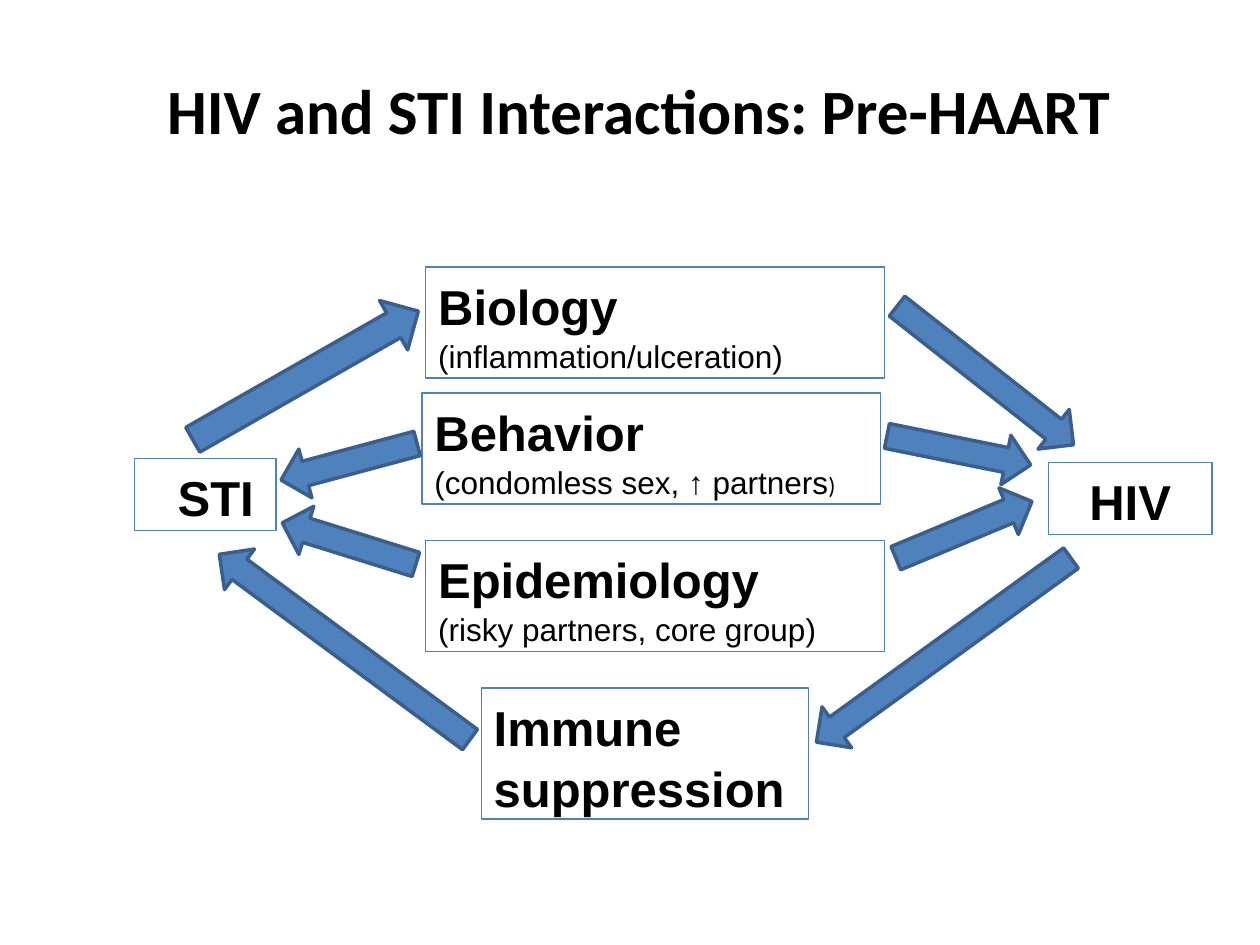
from dataclasses import dataclass
from math import atan2, degrees, hypot

from pptx import Presentation
from pptx.dml.color import RGBColor
from pptx.enum.shapes import MSO_SHAPE
from pptx.enum.text import MSO_ANCHOR, PP_ALIGN
from pptx.util import Inches, Pt

RECTANGLE, DOWN_ARROW = MSO_SHAPE.RECTANGLE, MSO_SHAPE.DOWN_ARROW
LEFT, CENTER = PP_ALIGN.LEFT, PP_ALIGN.CENTER
TOP, MIDDLE = MSO_ANCHOR.TOP, MSO_ANCHOR.MIDDLE
WIDTH, HEIGHT = 10, 7.5


@dataclass(frozen=True)
class Theme:
    """Colours, fonts and type sizes of the page."""
    ink: RGBColor = RGBColor(0, 0, 0)
    blue: RGBColor = RGBColor(0x4F, 0x81, 0xBD)
    edge: RGBColor = RGBColor(0x3A, 0x5F, 0x8C)
    title_font: str = "Calibri"
    body_font: str = "Arial"
    title: float = 36
    heading: float = 28
    detail: float = 18
    small: float = 13.5
    spacing: float = 1.05


THEME = Theme()


def add_span(para, text, size, bold=False, font=THEME.body_font):
    """Add one formatted run to a paragraph."""
    span = para.add_run()
    span.text = text
    span.font.name, span.font.size, span.font.bold = font, Pt(size), bold
    span.font.color.rgb = THEME.ink


def prepare_text(shape, align=LEFT, anchor=TOP, inset=0.1):
    """Set wrapping and alignment, and return the first paragraph."""
    frame = shape.text_frame
    frame.word_wrap = True
    frame.vertical_anchor = anchor
    frame.margin_left = Inches(inset)
    para = frame.paragraphs[0]
    para.alignment = align
    return para


def add_title(page, text):
    """Add the centred page title."""
    box = page.shapes.add_textbox(*map(Inches, (0.5, 0.24, 0.9 * WIDTH, 1.26)))
    para = prepare_text(box, CENTER, MIDDLE, inset=0.24)
    add_span(para, text, THEME.title, True, THEME.title_font)


def add_box(page, bounds, heading, align=LEFT, inset=0.1):
    """Add an outlined box with a bold heading and return its paragraph."""
    box = page.shapes.add_shape(RECTANGLE, *map(Inches, bounds))
    box.shadow.inherit = False
    box.fill.background()
    box.line.color.rgb, box.line.width = THEME.blue, Pt(0.75)
    para = prepare_text(box, align, inset=inset)
    para.line_spacing = THEME.spacing
    add_span(para, heading, THEME.heading, True)
    return para


def add_factor(page, left, top, heading, detail):
    """Add a factor box with a detail line and return its paragraph."""
    para = add_box(page, (left, top, 3.64, 0.88), heading)
    para.add_line_break()
    add_span(para, detail, THEME.detail)
    return para


def add_arrow(page, tail, head, thickness=0.4):
    """Add a block arrow that runs from tail to head."""
    across, down = head[0] - tail[0], head[1] - tail[1]
    length = hypot(across, down)
    left = (tail[0] + head[0] - thickness) / 2
    top = (tail[1] + head[1] - length) / 2
    arrow = page.shapes.add_shape(
        DOWN_ARROW, *map(Inches, (left, top, thickness, length)))
    arrow.rotation = degrees(atan2(-across, down)) % 360
    arrow.shadow.inherit = False
    arrow.fill.solid()
    arrow.fill.fore_color.rgb = THEME.blue
    arrow.line.color.rgb, arrow.line.width = THEME.edge, Pt(2)


def main():
    """Build the interaction diagram and save it."""
    deck = Presentation()
    deck.slide_width, deck.slide_height = Inches(WIDTH), Inches(HEIGHT)
    page = deck.slides.add_slide(deck.slide_layouts[6])

    add_title(page, "HIV and STI Interactions: Pre-HAART")
    add_box(page, (1.07, 3.64, 1.12, 0.57), "STI", inset=0.34)
    add_factor(page, 3.38, 2.12, "Biology", "(inflammation/ulceration)")
    behavior = add_factor(page, 3.35, 3.12, "Behavior",
                          "(condomless sex, ↑ partners")
    add_span(behavior, ")", THEME.small, font=THEME.title_font)
    add_factor(page, 3.38, 4.29, "Epidemiology", "(risky partners, core group)")
    immune = add_box(page, (3.82, 5.46, 2.6, 1.04), "Immune")
    immune.add_line_break()
    add_span(immune, "suppression", THEME.heading, True)
    add_box(page, (8.32, 3.67, 1.3, 0.57), "HIV", CENTER)

    for tail, head in (
        ((8.5, 4.43), (6.48, 5.89)),
        ((7.11, 4.43), (8.19, 3.98)),
        ((7.04, 3.46), (8.18, 3.69)),
        ((7.12, 2.43), (8.52, 3.53)),
        ((3.73, 5.87), (1.74, 4.4)),
        ((3.3, 4.48), (2.24, 4.15)),
        ((3.31, 3.52), (2.23, 3.81)),
    ):
        add_arrow(page, tail, head)
    add_arrow(page, (1.53, 3.49), (3.32, 2.47), thickness=0.45)

    deck.save("out.pptx")


if __name__ == "__main__":
    main()
